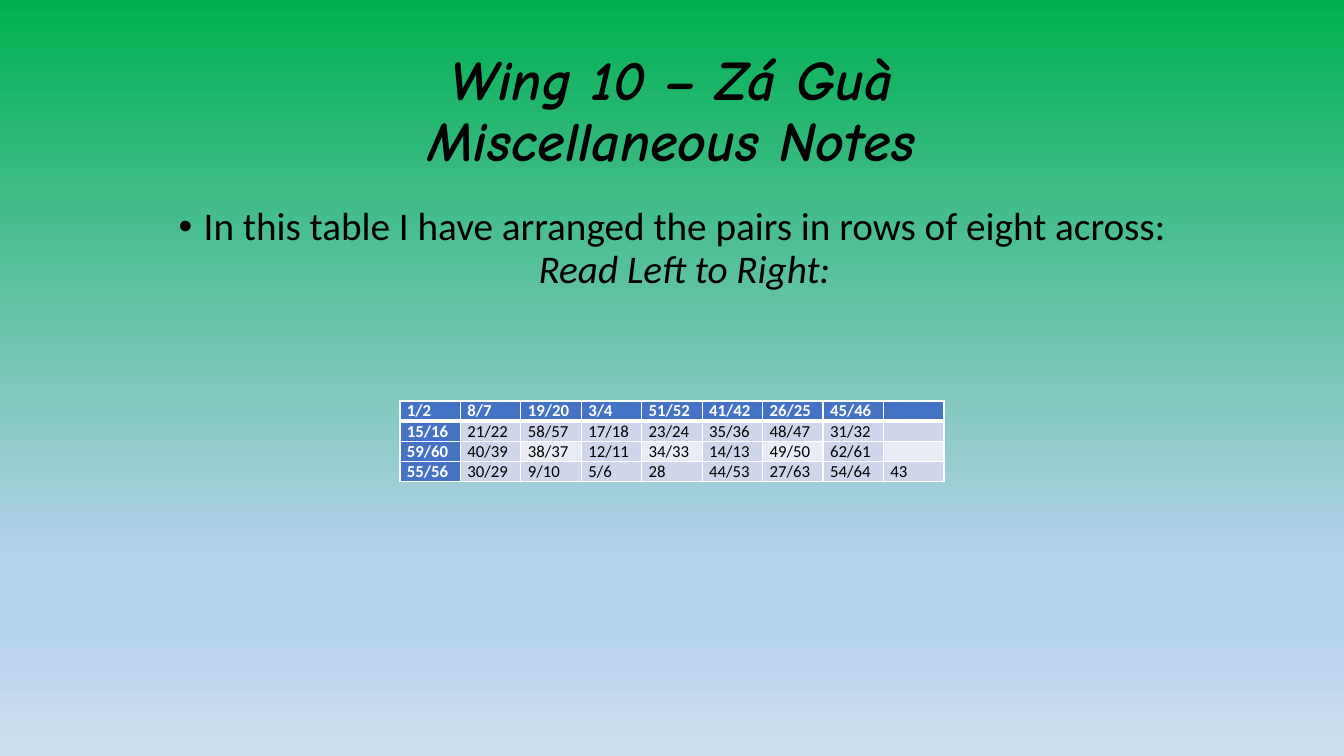
"""Builds the Wing 10 slide: a title, a bullet and a table of paired numbers."""
from lxml.etree import SubElement
from pptx import Presentation
from pptx.dml.color import RGBColor
from pptx.enum.text import MSO_ANCHOR, PP_ALIGN
from pptx.oxml.ns import qn
from pptx.util import Emu, Pt


def px(count):
    return Emu(round(count * 914400 / 100.8))


def style(run, color, **formats):
    run.font.color.rgb = RGBColor.from_string(color)
    for name, value in formats.items():
        setattr(run.font, name, value)


deck = Presentation()
deck.slide_width, deck.slide_height = px(1344), px(756)
slide = deck.slides.add_slide(deck.slide_layouts[6])

backdrop = slide.background.fill
backdrop.gradient()
backdrop.gradient_angle = 270
stops = slide.element.find(".//" + qn("a:gsLst"))
for old_stop in list(stops):
    stops.remove(old_stop)
for percent, color in [(0, "00B050"), (74, "B5D2EC"), (83, "B5D2EC"), (100, "CEE1F2")]:
    stop = SubElement(stops, qn("a:gs"), pos=str(percent * 1000))
    SubElement(stop, qn("a:srgbClr"), val=color)

TITLE_FONT = {"name": "Comic Neue", "size": Pt(40), "bold": True, "italic": True}
BODY_FONT = {"name": "Calibri", "size": Pt(28)}
texts = [
    (40, 146, MSO_ANCHOR.MIDDLE, TITLE_FONT, ["Wing 10 – Zá Guà", "Miscellaneous Notes"]),
    (202, 480, MSO_ANCHOR.TOP, BODY_FONT,
     ["In this table I have arranged the pairs in rows of eight across:", "Read Left to Right:"]),
]
for top, height, anchor, font, lines in texts:
    frame = slide.shapes.add_textbox(px(92), px(top), px(1160), px(height)).text_frame
    frame.word_wrap = True
    frame.vertical_anchor = anchor
    paragraph = frame.paragraphs[0]
    paragraph.alignment = PP_ALIGN.CENTER
    paragraph.line_spacing = 0.9
    paragraph.text = "\v".join(lines)
    for run in paragraph.runs:
        style(run, "000000", **font)

paragraph.space_before = Pt(10)
paragraph.runs[-1].font.italic = True
bullet = paragraph._p.get_or_add_pPr()
bullet.set("marL", str(px(25)))
bullet.set("indent", str(-px(25)))
SubElement(bullet, qn("a:buFont"), typeface="Arial")
SubElement(bullet, qn("a:buChar"), char="•")

pairs = [
    ["1/2", "8/7", "19/20", "3/4", "51/52", "41/42", "26/25", "45/46", ""],
    ["15/16", "21/22", "58/57", "17/18", "23/24", "35/36", "48/47", "31/32", ""],
    ["59/60", "40/39", "38/37", "12/11", "34/33", "14/13", "49/50", "62/61", ""],
    ["55/56", "30/29", "9/10", "5/6", "28", "44/53", "27/63", "54/64", "43"],
]
table = slide.shapes.add_table(4, 9, px(400), px(401), px(544), px(80)).table
for row, numbers in enumerate(pairs):
    for column, number in enumerate(numbers):
        cell = table.cell(row, column)
        cell.margin_left = cell.margin_right = px(7)
        cell.margin_top = cell.margin_bottom = 0
        heading = row == 0 or column == 0
        widths = {"L": 1, "R": 1, "T": 3 if row == 1 else 1, "B": 3 if row == 0 else 1}
        for side, width in widths.items():
            border = SubElement(cell._tc.get_or_add_tcPr(), qn("a:ln" + side), w=str(Pt(width)))
            SubElement(SubElement(border, qn("a:solidFill")), qn("a:srgbClr"), val="FFFFFF")
        light = row == 2 and column % 2 == 0
        shade = "4472C4" if heading else "E9EBF5" if light else "CFD5EA"
        cell.fill.solid()
        cell.fill.fore_color.rgb = RGBColor.from_string(shade)
        entry = cell.text_frame.paragraphs[0]
        if number:
            entry.text = number
            style(entry.runs[0], "FFFFFF" if heading else "000000",
                  name="Calibri", size=Pt(12), bold=heading)
        else:
            SubElement(entry._p, qn("a:endParaRPr"), sz="1200")

deck.save("out.pptx")
